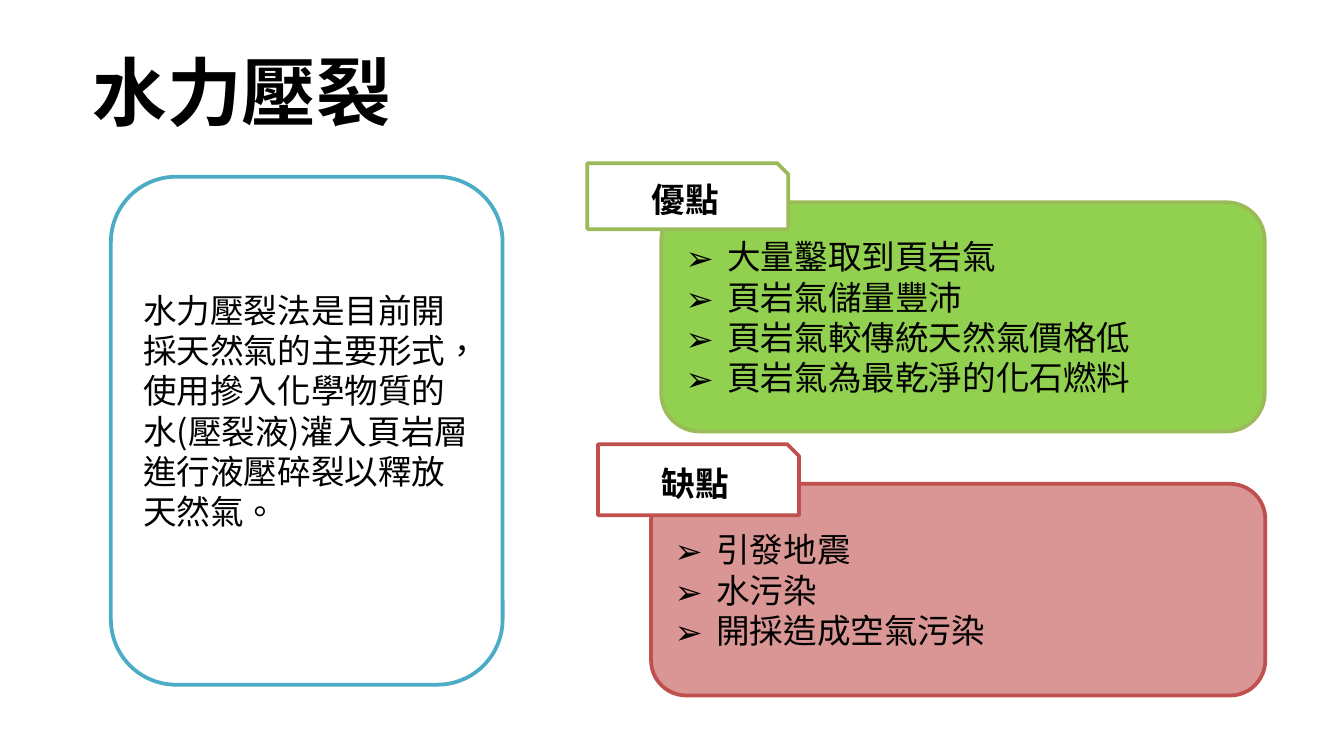
from dataclasses import dataclass

from lxml.etree import SubElement
from pptx import Presentation
from pptx.dml.color import RGBColor
from pptx.enum.shapes import MSO_SHAPE as Kind
from pptx.enum.text import MSO_ANCHOR as Anchor, PP_ALIGN as Align
from pptx.oxml.ns import qn
from pptx.util import Pt

PX = 4572  # 200 px to the inch
FONT = "Noto Sans CJK SC"
BLACK, WHITE = "000000", "FFFFFF"


@dataclass
class Box:
    left: int
    top: int
    width: int
    height: int


@dataclass
class Group:
    body: Box
    tab: Box
    name: str
    items: list[str]
    fill: str
    line: str


def px(num: int) -> int:
    return num * PX


def color(code: str) -> RGBColor:
    return RGBColor.from_string(code)


def place(shape, box: Box) -> None:
    shape.left, shape.top = px(box.left), px(box.top)
    shape.width, shape.height = px(box.width), px(box.height)


def write(shape, lines: list[str], *, size=18, bold=False, align=Align.LEFT,
          anchor=Anchor.MIDDLE, wrap=True, bullet="", foot=10) -> None:
    frame = shape.text_frame
    frame.word_wrap = wrap
    frame.vertical_anchor = anchor
    frame.margin_left = frame.margin_right = px(20)
    frame.margin_top, frame.margin_bottom = px(10), px(foot)
    for i, line in enumerate(lines):
        para = frame.add_paragraph() if i else frame.paragraphs[0]
        para.alignment = align
        if bullet:
            props = para._p.get_or_add_pPr()
            props.set("marL", str(px(62)))
            props.set("indent", str(px(-62)))
            SubElement(props, qn("a:buFont"), typeface=FONT)
            SubElement(props, qn("a:buChar"), char=bullet)
        run = para.add_run()
        run.text = line
        font = run.font
        font.size, font.bold, font.name = Pt(size), bold, FONT
        font.color.rgb = color(BLACK)
        props = run._r.get_or_add_rPr()
        props.set("lang", "zh-TW")
        SubElement(props, qn("a:ea"), typeface=FONT)


def panel(slide, kind: Kind, box: Box, fill: str, line: str):
    shape = slide.shapes.add_shape(kind, 0, 0, 0, 0)
    place(shape, box)
    shape.shadow.inherit = False
    shape.fill.solid()
    shape.fill.fore_color.rgb = color(fill)
    shape.line.color.rgb = color(line)
    shape.line.width = Pt(2)
    return shape


def draw(slide, group: Group) -> None:
    body = panel(slide, Kind.ROUNDED_RECTANGLE, group.body, group.fill, group.line)
    write(body, group.items, bullet="➢")
    tab = panel(slide, Kind.SNIP_1_RECTANGLE, group.tab, WHITE, group.line)
    write(tab, [group.name], bold=True, align=Align.CENTER)


GROUPS = [
    Group(Box(984, 301, 898, 341), Box(874, 243, 299, 98), "優點",
          ["大量鑿取到頁岩氣", "頁岩氣儲量豐沛",
           "頁岩氣較傳統天然氣價格低", "頁岩氣為最乾淨的化石燃料"],
          "92D050", "9BBB59"),
    Group(Box(969, 720, 914, 315), Box(890, 661, 299, 106), "缺點",
          ["引發地震", "水污染", "開採造成空氣污染"],
          "D99694", "C0504D"),
]
ABOUT = ("水力壓裂法是目前開採天然氣的主要形式，使用摻入化學物質的"
         "水(壓裂液)灌入頁岩層進行液壓碎裂以釋放天然氣。")


def main() -> None:
    deck = Presentation()
    deck.slide_width, deck.slide_height = px(2000), px(1125)
    slide = deck.slides.add_slide(deck.slide_layouts[5])

    # Title
    title = slide.shapes.title
    place(title, Box(118, 58, 490, 154))
    write(title, ["水力壓裂"], size=40, bold=True, anchor=Anchor.TOP, wrap=False)

    # Pros and cons
    for group in GROUPS:
        draw(slide, group)

    # Description, lifted by a deep bottom margin
    about = panel(slide, Kind.ROUNDED_RECTANGLE, Box(165, 263, 583, 756),
                  WHITE, "4BACC6")
    write(about, [ABOUT], foot=70)

    deck.save("out.pptx")


if __name__ == "__main__":
    main()
